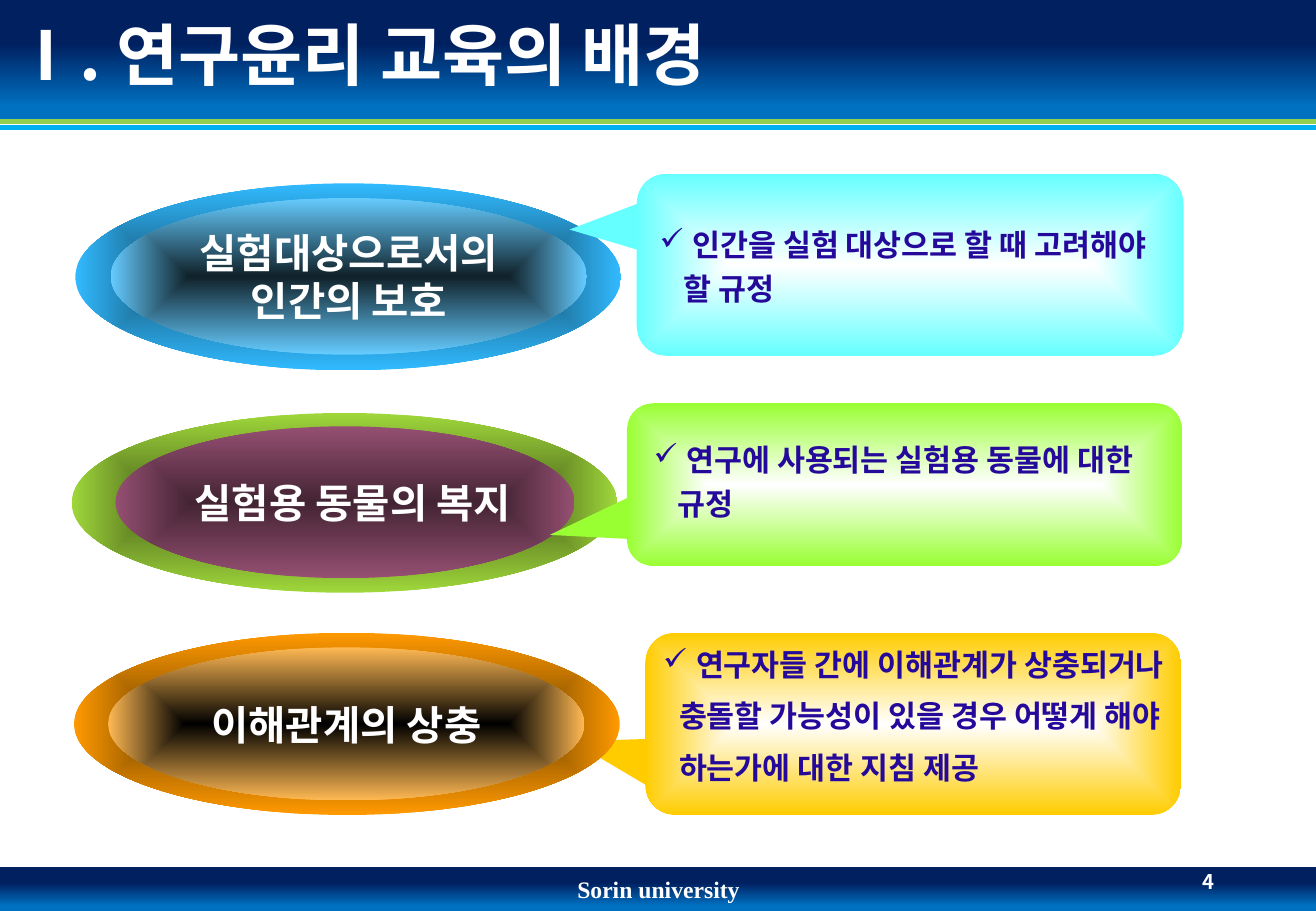
"""Build the slide on the background of research ethics education."""
from lxml import etree
from pptx import Presentation
from pptx.dml.color import RGBColor as RGB
from pptx.enum.shapes import MSO_CONNECTOR as LINE, MSO_SHAPE as SHAPE
from pptx.enum.text import MSO_ANCHOR as ANCHOR, PP_ALIGN as ALIGN
from pptx.oxml import parse_xml
from pptx.oxml.ns import nsdecls, qn
from pptx.util import Inches, Pt

HUES = {
    "white": "FFFFFF", "navy": "002060", "blue": "0070C0",
    "green": "92D050", "sky": "00B0F0", "ink": "25099B",
}
FONT = "Noto Sans CJK KR"


def write(frame, text, size=18, font=FONT, hue="white", align=ALIGN.LEFT,
          anchor=ANCHOR.MIDDLE, wrap=True, lead=None, gap=0, hang=None):
    """Fill a text frame, one paragraph per line; hang adds a check mark."""
    frame.word_wrap = wrap
    frame.vertical_anchor = anchor
    for i, words in enumerate(text.split("\n")):
        para = frame.paragraphs[0] if i == 0 else frame.add_paragraph()
        para.alignment = align
        para.line_spacing = lead
        para.space_before = Pt(gap)
        run = para.add_run()
        run.text = words
        run.font.size = Pt(size)
        run.font.bold = True
        run.font.name = font
        run.font.color.rgb = RGB.from_string(HUES[hue])
        etree.SubElement(run.font._element, qn("a:ea"), typeface=font)
        if hang:
            props = para._p.get_or_add_pPr()
            first = i == 0
            props.set("marL", str(Inches(0.27 if first else hang)))
            props.set("indent", str(Inches(-0.27 if first else 0)))
            if first:
                etree.SubElement(props, qn("a:buChar"), char="✓")


def draw(kind, box, stops, mode=None):
    """Add a borderless shape with a downward or a centred gradient."""
    shape = slide.shapes.add_shape(kind, *map(Inches, box))
    shape.shadow.inherit = False
    shape.line.fill.background()
    shape.fill.gradient()
    for stop, (place, hue) in zip(shape.fill.gradient_stops, stops):
        stop.position = place
        stop.color.rgb = RGB.from_string(hue)
    shape.fill.gradient_angle = 270
    if mode:
        lin = shape._element.spPr.find(".//" + qn("a:lin"))
        lin.getparent().replace(lin, parse_xml(
            f'<a:path {nsdecls("a")} path="{mode}"><a:fillToRect '
            'l="50000" t="50000" r="50000" b="50000"/></a:path>'))
    return shape


deck = Presentation()
deck.slide_width, deck.slide_height = Inches(10.83), Inches(7.5)
slide = deck.slides.add_slide(deck.slide_layouts[5])

for top, high in ((7.14, 0.36), (0, 0.99)):
    draw(SHAPE.RECTANGLE, (0, top, 10.83, high),
         ((0.36, HUES["navy"]), (0.88, HUES["blue"])))

for y, hue in ((1, "green"), (1.05, "sky")):
    rule = slide.shapes.add_connector(
        LINE.STRAIGHT, 0, Inches(y), deck.slide_width, Inches(y))
    rule.line.color.rgb = RGB.from_string(HUES[hue])
    rule.line.width = Pt(3)
    etree.SubElement(rule._element.spPr, qn("a:effectLst"))

title = slide.shapes.title
title.left, title.top = Inches(0), Inches(0.03)
title.width, title.height = Inches(10.73), Inches(0.9)
write(title.text_frame, "Ⅰ. 연구윤리 교육의 배경", size=40, lead=0.9)
slide.shapes._spTree.append(title._element)

for box, text, form in (
    ((7.65, 7.06, 2.44, 0.4), "4", dict(size=12, align=ALIGN.RIGHT)),
    ((3.59, 7.12, 3.66, 0.4), "Sorin university",
     dict(size=14, font="Times New Roman", align=ALIGN.CENTER)),
):
    foot = slide.shapes.add_textbox(*map(Inches, box))
    write(foot.text_frame, text, **form)

topics = (
    dict(ring=(0.62, 1.51, 4.49, 1.54), rim=("175676", "31BAFF"),
         core=(0.91, 1.63, 3.92, 1.29), fill=("102129", "66CCFF"),
         name="실험대상으로서의\n인간의 보호", align=ALIGN.CENTER,
         call=(5.24, 1.43, 4.5, 1.5), tip=(-0.623, -0.193), glow="66FFFF",
         note=(5.33, 1.81, 4.31, 0.86), lead=None, hang=0.2,
         text="인간을 실험 대상으로 할 때 고려해야\n할 규정"),
    dict(ring=(0.59, 3.4, 4.49, 1.48), rim=("4A631B", "9FD73B"),
         core=(0.95, 3.51, 3.78, 1.25), fill=("432433", "954F72"),
         name="실험용 동물의 복지", align=ALIGN.LEFT,
         call=(5.16, 3.32, 4.57, 1.34), tip=(-0.639, 0.309), glow="99FF33",
         note=(5.28, 3.58, 4.26, 0.86), lead=None, hang=0.2,
         text="연구에 사용되는 실험용 동물에 대한\n규정"),
    dict(ring=(0.61, 5.21, 4.49, 1.5), rim=("764700", "FF9900"),
         core=(0.89, 5.33, 3.92, 1.26), fill=("000000", "FFB953"),
         name="이해관계의 상충", align=ALIGN.CENTER,
         call=(5.31, 5.21, 4.41, 1.5), tip=(-0.637, 0.095), glow="FFCC00",
         note=(5.36, 5.21, 4.37, 1.49), lead=1.2, hang=0.13,
         text="연구자들 간에 이해관계가 상충되거나\n"
              "충돌할 가능성이 있을 경우 어떻게 해야\n하는가에 대한 지침 제공"),
)

for topic in topics:
    ring = draw(SHAPE.OVAL, topic["ring"], enumerate(topic["rim"]), "shape")
    core = draw(SHAPE.OVAL, topic["core"], enumerate(topic["fill"]), "shape")
    write(core.text_frame, topic["name"], size=24, align=topic["align"],
          wrap=False)

    call = draw(SHAPE.ROUNDED_RECTANGULAR_CALLOUT, topic["call"],
                enumerate((HUES["white"], topic["glow"])), "rect")
    for i, value in enumerate((*topic["tip"], 0.167)):
        call.adjustments[i] = value
    if topic is topics[-1]:
        ring._element.addprevious(call._element)

    note = slide.shapes.add_textbox(*map(Inches, topic["note"]))
    note.text_frame.margin_right = 0
    write(note.text_frame, topic["text"], hue="ink", anchor=ANCHOR.TOP,
          lead=topic["lead"], gap=4.5, hang=topic["hang"])

deck.save("out.pptx")
